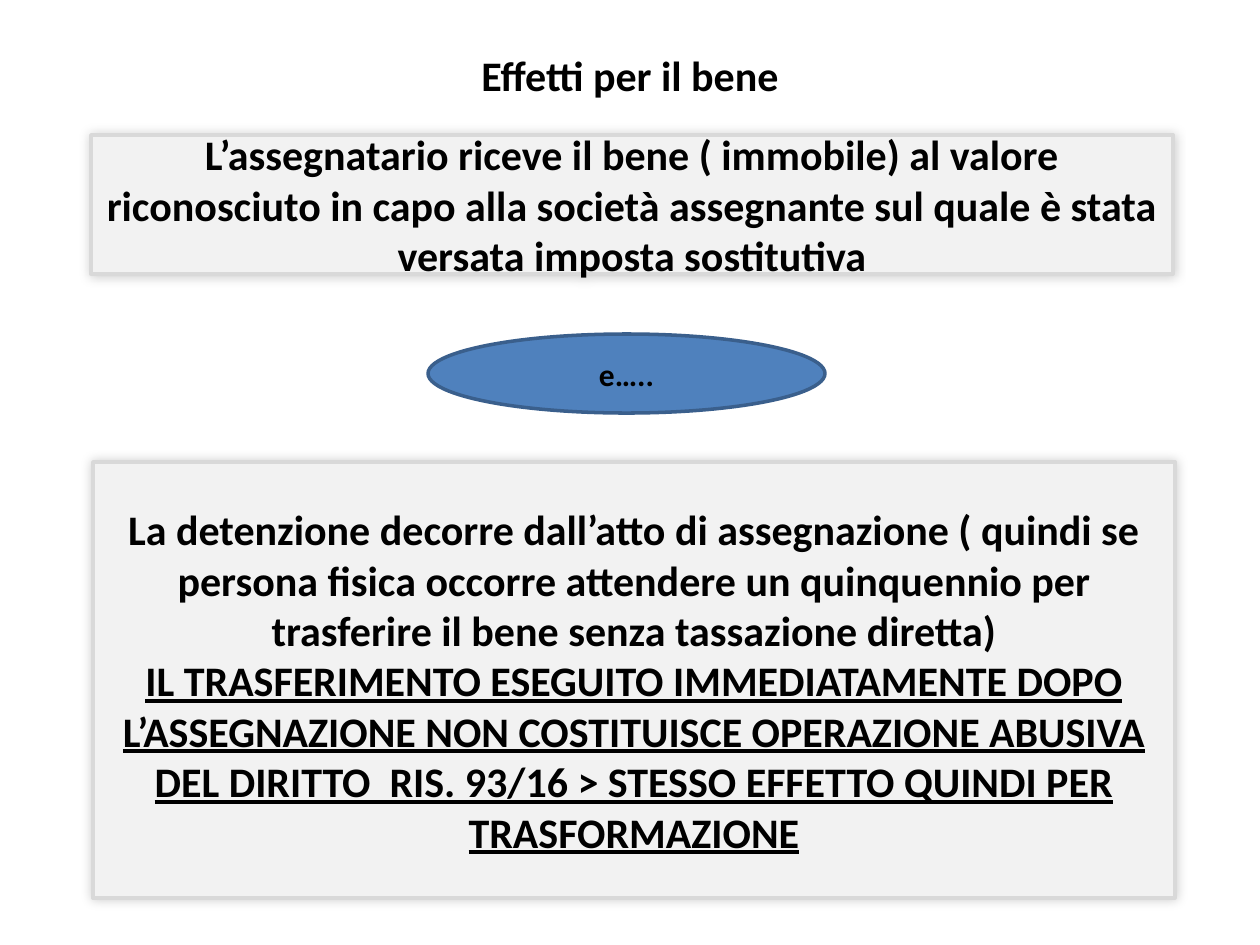
import dataclasses
import typing

import lxml.etree
import pptx
import pptx.dml.color
import pptx.enum.shapes
import pptx.enum.text
import pptx.oxml.ns
import pptx.util

SCALE = 914400 / 126  # EMU in one px
KINDS = pptx.enum.shapes.MSO_SHAPE
FONT = {"name": "Calibri", "bold": True}


@dataclasses.dataclass
class Line:
    text: str
    under: bool = False


@dataclasses.dataclass
class Box:
    kind: typing.Any
    place: tuple[int, int, int, int]
    fill: str
    edge: str
    size: int
    lines: list[Line]
    glow: bool = False


def px(count: int) -> int:
    return round(count * SCALE)


def tint(code: str) -> pptx.dml.color.RGBColor:
    return pptx.dml.color.RGBColor.from_string(code)


def put(target: typing.Any, values: dict[str, typing.Any]) -> None:
    for name, value in values.items():
        setattr(target, name, value)


def write(frame: typing.Any, lines: list[Line], size: int) -> None:
    put(frame, {"word_wrap": True,
                "vertical_anchor": pptx.enum.text.MSO_ANCHOR.MIDDLE})
    for index, line in enumerate(lines):
        para = frame.add_paragraph() if index else frame.paragraphs[0]
        para.alignment = pptx.enum.text.PP_ALIGN.CENTER
        run = para.add_run()
        run.text = line.text
        put(run.font, FONT | {"size": pptx.util.Pt(size)})
        if line.under:
            run.font.underline = True
        run.font.color.rgb = tint("000000")


def shade(shape: typing.Any) -> None:
    """Add a soft black shadow around the shape."""
    name = pptx.oxml.ns.qn
    effects = shape._element.spPr.find(name("a:effectLst"))
    outer = lxml.etree.SubElement(
        effects, name("a:outerShdw"), blurRad=str(pptx.util.Pt(6)),
        dist="0", dir=str(225 * 60000), rotWithShape="0")
    color = lxml.etree.SubElement(outer, name("a:srgbClr"), val="000000")
    lxml.etree.SubElement(color, name("a:alpha"), val="20000")


def draw(slide: typing.Any, box: Box) -> None:
    shape = slide.shapes.add_shape(box.kind, *map(px, box.place))
    shape.shadow.inherit = False
    shape.fill.solid()
    shape.fill.fore_color.rgb = tint(box.fill)
    shape.line.color.rgb = tint(box.edge)
    shape.line.width = pptx.util.Pt(2)
    if box.glow:
        shade(shape)
    write(shape.text_frame, box.lines, box.size)


def panel(place: tuple[int, int, int, int], lines: list[Line]) -> Box:
    return Box(KINDS.RECTANGLE, place, "F2F2F2", "D9D9D9", 24, lines, True)


BOXES = [
    panel((91, 135, 1082, 139), [
        Line("L’assegnatario riceve il bene ( immobile) al valore riconosciuto "
             "in capo alla società assegnante sul quale è stata versata "
             "imposta sostitutiva")]),
    panel((93, 462, 1082, 436), [
        Line("La detenzione decorre dall’atto di assegnazione ( quindi se "
             "persona fisica occorre attendere un quinquennio per trasferire "
             "il bene senza tassazione diretta)"),
        Line("IL TRASFERIMENTO ESEGUITO IMMEDIATAMENTE DOPO L’ASSEGNAZIONE "
             "NON COSTITUISCE OPERAZIONE ABUSIVA DEL DIRITTO  RIS. 93/16 > "
             "STESSO EFFETTO QUINDI PER TRASFORMAZIONE", True)]),
    Box(KINDS.OVAL, (428, 334, 397, 79), "4F81BD", "3A5F8C", 18,
        [Line("e…..")]),
]


def main() -> None:
    deck = pptx.Presentation()
    put(deck, {"slide_width": px(1260), "slide_height": px(945)})
    slide = deck.slides.add_slide(deck.slide_layouts[5])
    title = slide.shapes.title
    put(title, {"left": px(0), "top": px(37),
                "width": px(1260), "height": px(76)})
    write(title.text_frame, [Line("Effetti per il bene")], 24)
    for box in BOXES:
        draw(slide, box)
    deck.save("out.pptx")


if __name__ == "__main__":
    main()
